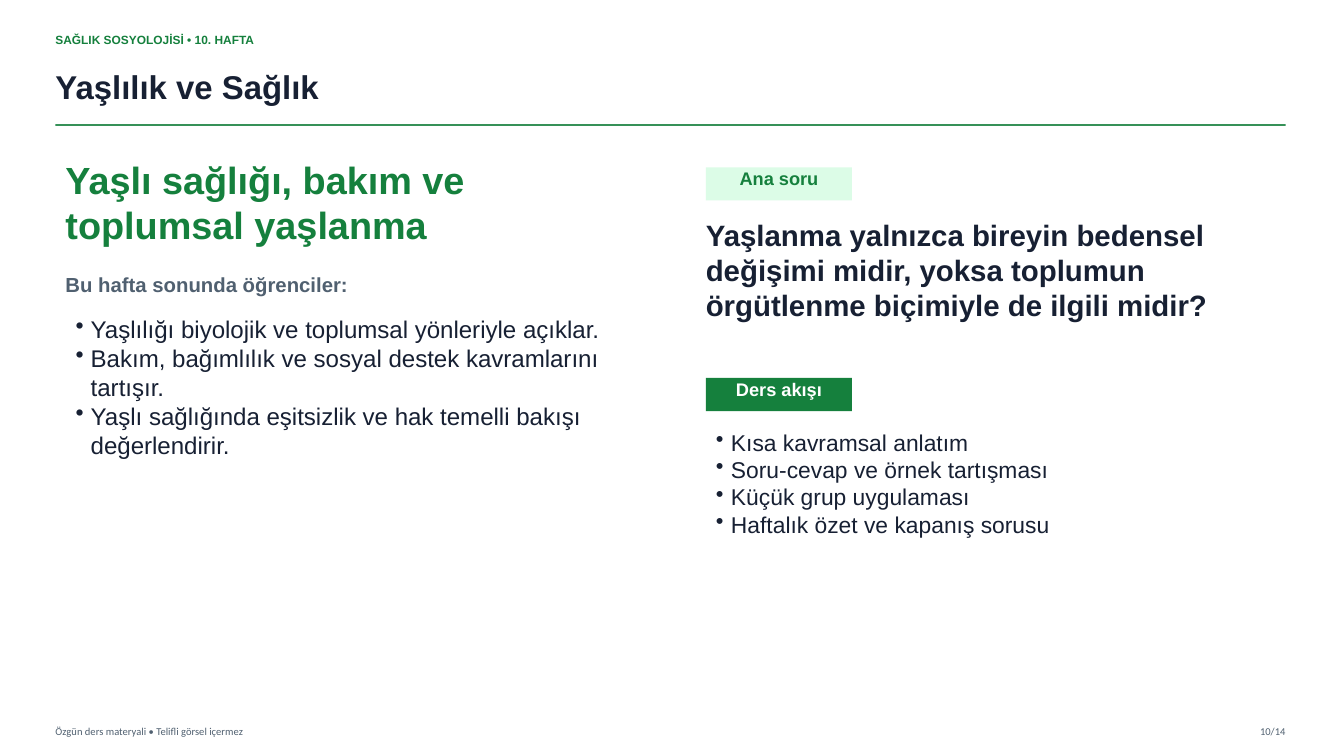
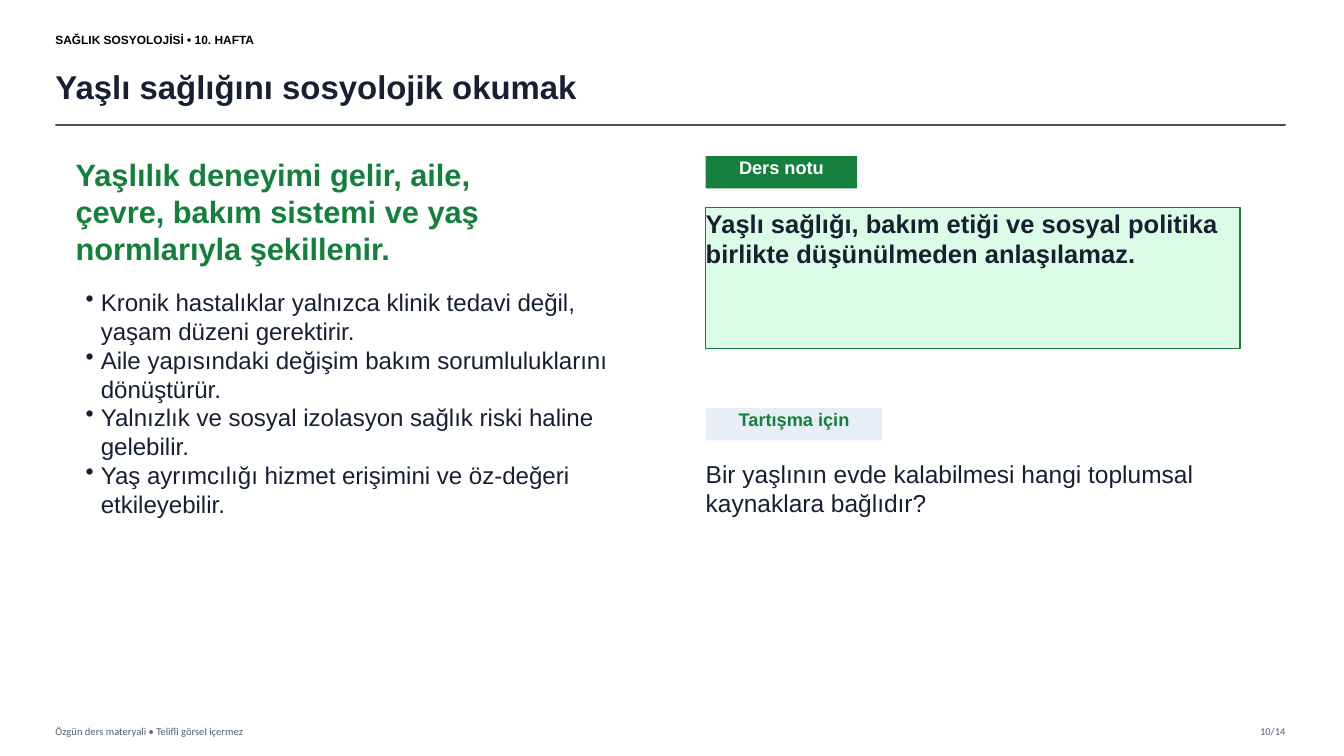
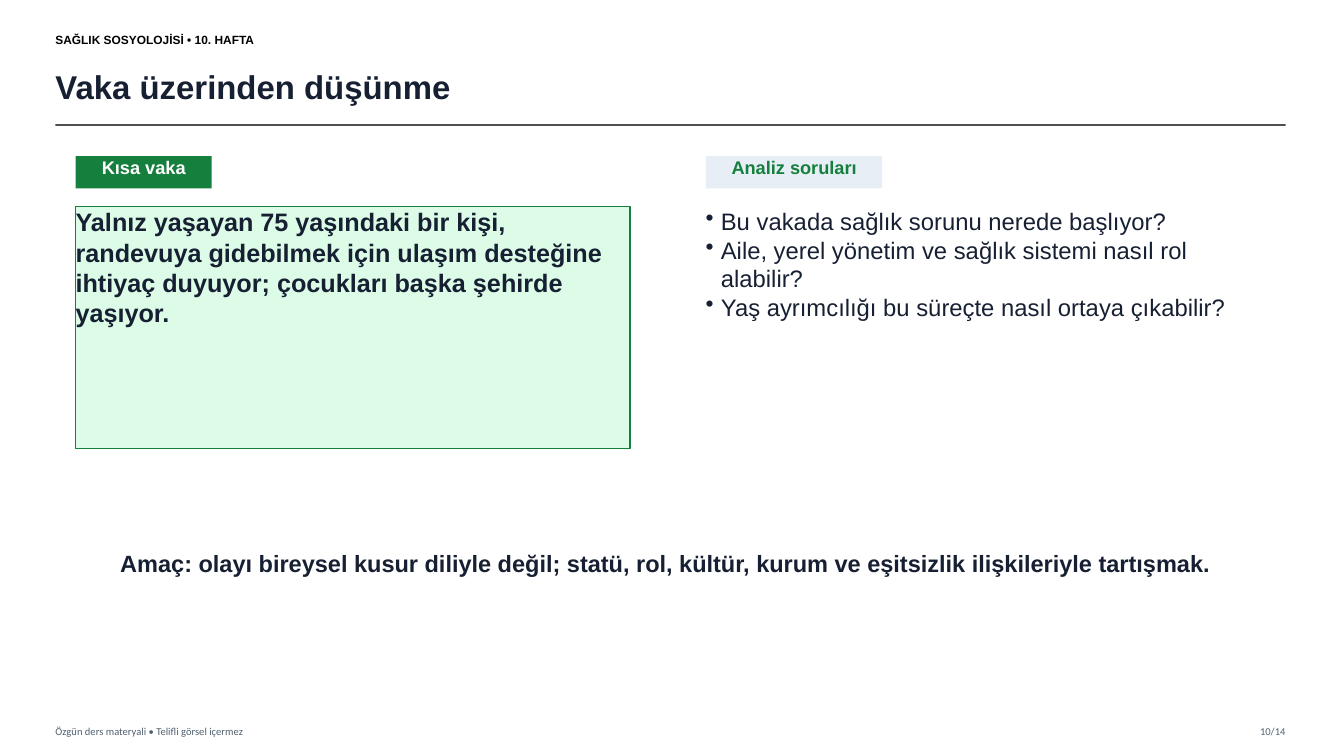
from lxml import etree
from pptx import Presentation
from pptx.dml.color import RGBColor
from pptx.enum.shapes import MSO_CONNECTOR, MSO_SHAPE
from pptx.enum.text import MSO_ANCHOR, PP_ALIGN
from pptx.oxml.ns import qn
from pptx.util import Inches, Pt

STRAIGHT = MSO_CONNECTOR.STRAIGHT
RECTANGLE = MSO_SHAPE.RECTANGLE
TOP, MIDDLE = MSO_ANCHOR.TOP, MSO_ANCHOR.MIDDLE
LEFT, CENTER, RIGHT = PP_ALIGN.LEFT, PP_ALIGN.CENTER, PP_ALIGN.RIGHT

# Shared palette, fonts and margins
GREEN, MINT, MIST = "15803D", "DCFCE7", "E8EEF5"
INK, SLATE, CHARCOAL = "172033", "506070", "333333"
BLACK, WHITE = "000000", "FFFFFF"
BODY_FONT, FOOTER_FONT = "Arial", "Calibri"
MARGIN, RIGHT_EDGE = 0.55, 12.75
RIGHT_COLUMN = 7
BULLET_INDENT = 0.15


def rgb(color):
    return RGBColor.from_string(color)


def add_bullet(para):
    """Give the paragraph a round bullet with a hanging indent."""
    props = para._p.get_or_add_pPr()
    indent = Inches(BULLET_INDENT)
    props.set("marL", str(indent))
    props.set("indent", str(-indent))
    etree.SubElement(props, qn("a:buChar"), char="•")


def write_text(shape, text, size=17, color=INK, bold=False, font=BODY_FONT,
               align=LEFT, anchor=TOP, bullets=False):
    """Fill a shape with one paragraph per line of text."""
    frame = shape.text_frame
    frame.word_wrap = True
    frame.vertical_anchor = anchor
    frame.margin_left = frame.margin_right = 0
    frame.margin_top = frame.margin_bottom = 0
    lines = [text] if isinstance(text, str) else text
    for index, line in enumerate(lines):
        para = frame.add_paragraph() if index else frame.paragraphs[0]
        para.alignment = align
        if bullets:
            add_bullet(para)
        span = para.add_run()
        span.text = line
        span.font.name = font
        span.font.size = Pt(size)
        span.font.bold = bold
        span.font.color.rgb = rgb(color)


def add_text(page, left, top, width, height, text, **style):
    box = page.shapes.add_textbox(
        Inches(left), Inches(top), Inches(width), Inches(height))
    write_text(box, text, **style)


def add_panel(page, left, top, width, height, text, fill, line=None, **style):
    """Filled rectangle with text, outlined when a line colour is given."""
    panel = page.shapes.add_shape(
        RECTANGLE, Inches(left), Inches(top), Inches(width), Inches(height))
    panel.shadow.inherit = False
    panel.fill.solid()
    panel.fill.fore_color.rgb = rgb(fill)
    if line:
        panel.line.color.rgb = rgb(line)
        panel.line.width = Pt(1)
    else:
        panel.line.fill.background()
    write_text(panel, text, **style)


def add_tag(page, left, top, width, text, fill, color=GREEN, height=0.32):
    add_panel(page, left, top, width, height, text, fill,
              size=13, color=color, bold=True, align=CENTER)


def add_callout(page, left, top, width, height, text, size):
    add_panel(page, left, top, width, height, text, MINT, line=GREEN,
              size=size, bold=True)


def add_rule(page, top, color):
    """Slightly transparent line across the page under the title."""
    rule = page.shapes.add_connector(
        STRAIGHT, Inches(MARGIN), Inches(top), Inches(RIGHT_EDGE), Inches(top))
    rule.line.color.rgb = rgb(color)
    rule.line.width = Pt(1.2)
    tint = rule._element.spPr.find(".//" + qn("a:srgbClr"))
    etree.SubElement(tint, qn("a:alpha"), val="85000")
    etree.SubElement(rule._element.spPr, qn("a:effectLst"))


def add_page(deck, title, kicker_color=BLACK, rule_color=CHARCOAL):
    """Blank page with the shared header and footer."""
    page = deck.slides.add_slide(deck.slide_layouts[6])
    page.background.fill.solid()
    page.background.fill.fore_color.rgb = rgb(WHITE)
    add_text(page, MARGIN, 0.25, 3.6, 0.28, "SAĞLIK SOSYOLOJİSİ • 10. HAFTA",
             size=8.5, color=kicker_color, bold=True, anchor=MIDDLE)
    add_text(page, MARGIN, 0.58, 11.95, 0.55, title,
             size=23.5, bold=True, anchor=MIDDLE)
    add_rule(page, 1.24, rule_color)
    footer = dict(size=7.5, color=SLATE, font=FOOTER_FONT, anchor=MIDDLE)
    add_text(page, MARGIN, 7.14, 6, 0.22,
             "Özgün ders materyali • Telifli görsel içermez", **footer)
    add_text(page, RIGHT_EDGE - 0.65, 7.14, 0.65, 0.22, "10/14",
             align=RIGHT, **footer)
    return page


def build_opening(deck):
    page = add_page(deck, "Yaşlılık ve Sağlık", GREEN, GREEN)
    # Topic and learning goals
    add_text(page, 0.65, 1.55, 5.3, 0.95,
             "Yaşlı sağlığı, bakım ve toplumsal yaşlanma",
             size=27, color=GREEN, bold=True)
    add_text(page, 0.65, 2.7, 4.9, 0.3, "Bu hafta sonunda öğrenciler:",
             size=14.5, color=SLATE, bold=True)
    add_text(page, 0.75, 3.12, 5.5, 2, [
        "Yaşlılığı biyolojik ve toplumsal yönleriyle açıklar.",
        "Bakım, bağımlılık ve sosyal destek kavramlarını tartışır.",
        "Yaşlı sağlığında eşitsizlik ve hak temelli bakışı değerlendirir.",
    ], size=17.2, bullets=True)
    # Main question and lesson flow
    add_tag(page, RIGHT_COLUMN, 1.66, 1.45, "Ana soru", MINT, height=0.33)
    add_text(page, RIGHT_COLUMN, 2.15, 5.35, 1.1,
             "Yaşlanma yalnızca bireyin bedensel değişimi midir, yoksa "
             "toplumun örgütlenme biçimiyle de ilgili midir?",
             size=21, bold=True)
    add_tag(page, RIGHT_COLUMN, 3.75, 1.45, "Ders akışı", GREEN, WHITE,
            height=0.33)
    add_text(page, RIGHT_COLUMN + 0.1, 4.25, 5.35, 1.55, [
        "Kısa kavramsal anlatım",
        "Soru-cevap ve örnek tartışması",
        "Küçük grup uygulaması",
        "Haftalık özet ve kapanış sorusu",
    ], size=16.3, bullets=True)


def build_reading(deck):
    page = add_page(deck, "Yaşlı sağlığını sosyolojik okumak")
    # Key statement and its evidence
    add_text(page, 0.75, 1.55, 4.6, 1,
             "Yaşlılık deneyimi gelir, aile, çevre, bakım sistemi ve yaş "
             "normlarıyla şekillenir.", size=22, color=GREEN, bold=True)
    add_text(page, 0.85, 2.85, 5.25, 2.7, [
        "Kronik hastalıklar yalnızca klinik tedavi değil, yaşam düzeni "
        "gerektirir.",
        "Aile yapısındaki değişim bakım sorumluluklarını dönüştürür.",
        "Yalnızlık ve sosyal izolasyon sağlık riski haline gelebilir.",
        "Yaş ayrımcılığı hizmet erişimini ve öz-değeri etkileyebilir.",
    ], size=17.2, bullets=True)
    # Lecture note and discussion
    add_tag(page, RIGHT_COLUMN, 1.55, 1.5, "Ders notu", GREEN, WHITE)
    add_callout(page, RIGHT_COLUMN, 2.06, 5.3, 1.4,
                "Yaşlı sağlığı, bakım etiği ve sosyal politika birlikte "
                "düşünülmeden anlaşılamaz.", size=18.2)
    add_tag(page, RIGHT_COLUMN, 4.05, 1.75, "Tartışma için", MIST)
    add_text(page, RIGHT_COLUMN, 4.55, 5.3, 1.25,
             "Bir yaşlının evde kalabilmesi hangi toplumsal kaynaklara "
             "bağlıdır?", size=17.5)


def build_case(deck):
    page = add_page(deck, "Vaka üzerinden düşünme")
    # Case
    add_tag(page, 0.75, 1.55, 1.35, "Kısa vaka", GREEN, WHITE)
    add_callout(page, 0.75, 2.05, 5.5, 2.4,
                "Yalnız yaşayan 75 yaşındaki bir kişi, randevuya gidebilmek "
                "için ulaşım desteğine ihtiyaç duyuyor; çocukları başka "
                "şehirde yaşıyor.", size=18)
    # Questions and purpose
    add_tag(page, RIGHT_COLUMN, 1.55, 1.75, "Analiz soruları", MIST)
    add_text(page, RIGHT_COLUMN, 2.05, 5.4, 2.65, [
        "Bu vakada sağlık sorunu nerede başlıyor?",
        "Aile, yerel yönetim ve sağlık sistemi nasıl rol alabilir?",
        "Yaş ayrımcılığı bu süreçte nasıl ortaya çıkabilir?",
    ], size=17, bullets=True)
    add_text(page, 1.05, 5.45, 11.1, 0.6,
             "Amaç: olayı bireysel kusur diliyle değil; statü, rol, kültür, "
             "kurum ve eşitsizlik ilişkileriyle tartışmak.",
             size=16.8, bold=True, align=CENTER)


def main():
    deck = Presentation()
    deck.slide_width = Inches(13.33)
    deck.slide_height = Inches(7.5)
    build_opening(deck)
    build_reading(deck)
    build_case(deck)
    deck.save("out.pptx")


if __name__ == "__main__":
    main()
